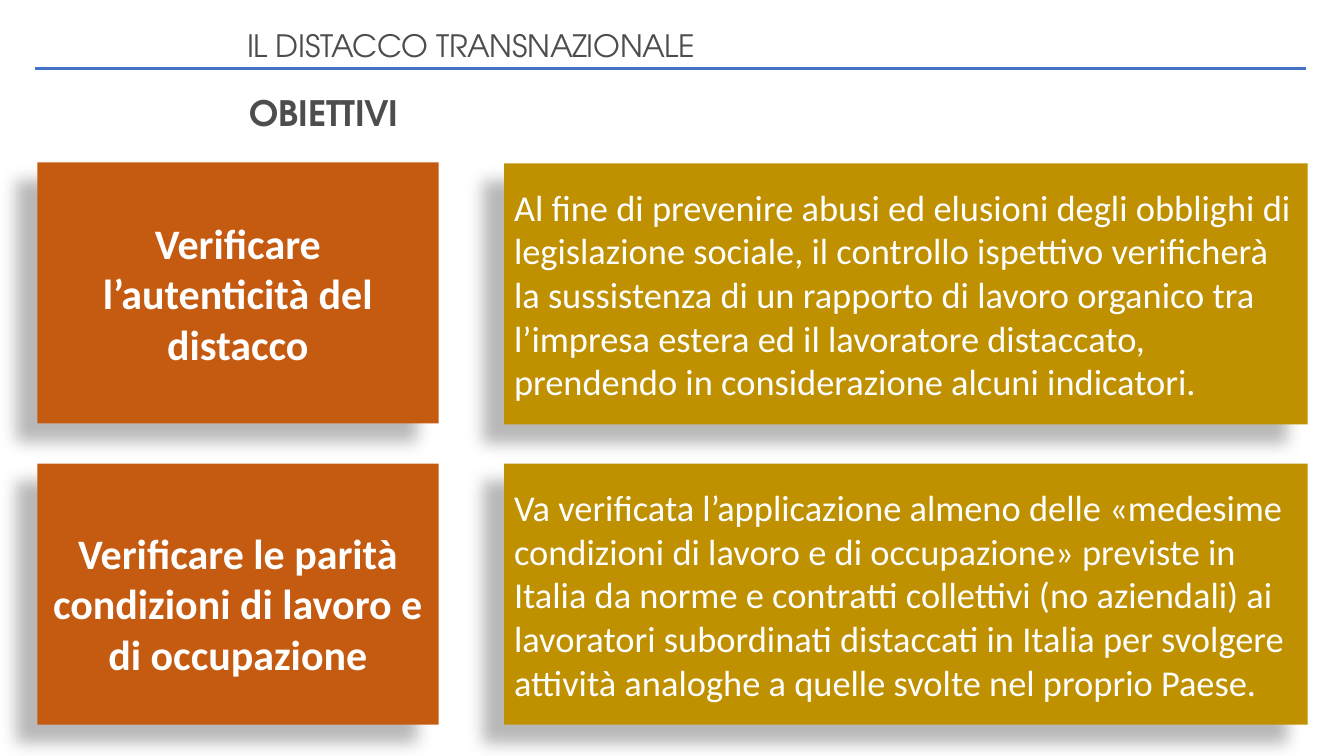
from dataclasses import dataclass

from lxml import etree
from pptx import Presentation
from pptx import util as u
from pptx.dml.color import RGBColor
from pptx.enum import shapes, text
from pptx.oxml import ns

PX = 9144  # 100 px to the inch
RUST, GOLD, GREY, BLUE, WHITE = "C55A11", "BF9000", "4D4D4D", "4472C4", "FFFFFF"


@dataclass
class Head:
    words: str
    left: int
    top: int
    size: int
    bold: bool


@dataclass
class Card:
    words: str
    left: int
    top: int
    width: int
    fill: str
    size: int
    bold: bool
    align: text.PP_ALIGN
    drop: int = 0  # extra inset above the text


def px(n: int) -> u.Emu:
    return u.Emu(n * PX)


def color(code: str) -> RGBColor:
    return RGBColor.from_string(code)


def style(run, face: str, size: int, code: str, bold: bool) -> None:
    run.font.name = face
    run.font.size = u.Pt(size)
    run.font.bold = bold
    run.font.color.rgb = color(code)


def effect(shape):
    return etree.SubElement(shape._element.spPr, ns.qn("a:effectLst"))


def shade(shape) -> None:
    """Soft shadow falling to the lower left."""
    outer = etree.SubElement(
        effect(shape), ns.qn("a:outerShdw"),
        blurRad=str(u.Pt(11.8)), dist=str(u.Pt(19.7)), dir=str(141 * 60000),
        algn="tr", rotWithShape="0")
    black = etree.SubElement(outer, ns.qn("a:srgbClr"), val="000000")
    etree.SubElement(black, ns.qn("a:alpha"), val="28000")


def draw_head(shape, head: Head) -> None:
    shape.left, shape.top = px(head.left), px(head.top)
    shape.width, shape.height = px(864), px(33)
    frame = shape.text_frame
    frame.text = head.words
    frame.word_wrap = True
    frame.auto_size = text.MSO_AUTO_SIZE.NONE
    frame.vertical_anchor = text.MSO_ANCHOR.TOP
    frame.margin_top = frame.margin_bottom = 0
    para = frame.paragraphs[0]
    para.alignment = text.PP_ALIGN.LEFT
    para.line_spacing = 0.9
    para.space_before = u.Pt(0)
    run = para.runs[0]
    style(run, "TeX Gyre Adventor", head.size, GREY, head.bold)
    run._r.get_or_add_rPr().set("spc", "-20")


def draw_card(slide, card: Card) -> None:
    box = slide.shapes.add_shape(
        shapes.MSO_SHAPE.RECTANGLE,
        px(card.left), px(card.top), px(card.width), px(259))
    box.fill.solid()
    box.fill.fore_color.rgb = color(card.fill)
    box.line.fill.background()
    shade(box)
    frame = box.text_frame
    frame.text = card.words
    frame.word_wrap = True
    frame.vertical_anchor = text.MSO_ANCHOR.MIDDLE
    frame.margin_top = px(5 + card.drop)
    para = frame.paragraphs[0]
    para.alignment = card.align
    style(para.runs[0], "Calibri", card.size, WHITE, card.bold)


def goal(words: str, top: int, drop: int = 0) -> Card:
    return Card(words, 37, top, 398, RUST, 30, True, text.PP_ALIGN.CENTER, drop)


def note(words: str, top: int) -> Card:
    return Card(words, 500, top, 797, GOLD, 26, False, text.PP_ALIGN.LEFT)


CARDS = [
    goal("Verificare l’autenticità del distacco", 161),
    goal("Verificare le parità condizioni di lavoro e di occupazione", 460, 17),
    note("Al fine di prevenire abusi ed elusioni degli obblighi di legislazione "
         "sociale, il controllo ispettivo verificherà la sussistenza di un "
         "rapporto di lavoro organico tra l’impresa estera ed il lavoratore "
         "distaccato, prendendo in considerazione alcuni indicatori.", 162),
    note("Va verificata l’applicazione almeno delle «medesime condizioni di "
         "lavoro e di occupazione» previste in Italia da norme e contratti "
         "collettivi (no aziendali) ai lavoratori subordinati distaccati in "
         "Italia per svolgere attività analoghe a quelle svolte nel proprio "
         "Paese.", 460),
]


def main() -> None:
    deck = Presentation()
    deck.slide_width, deck.slide_height = px(1333), px(750)
    slide = deck.slides.add_slide(deck.slide_layouts[5])

    # Rule under the title
    rule = slide.shapes.add_connector(
        shapes.MSO_CONNECTOR.STRAIGHT, px(35), px(68), px(1295), px(68))
    rule.line.color.rgb = color(BLUE)
    rule.line.width = u.Pt(2.25)
    effect(rule)

    # Title and heading
    draw_head(slide.shapes.title,
              Head("IL DISTACCO TRANSNAZIONALE", 235, 31, 22, False))
    draw_head(slide.shapes.add_textbox(0, 0, 0, 0),
              Head("OBIETTIVI", 238, 96, 25, True))

    # Goals and their notes
    for card in CARDS:
        draw_card(slide, card)

    deck.save("out.pptx")


if __name__ == "__main__":
    main()
